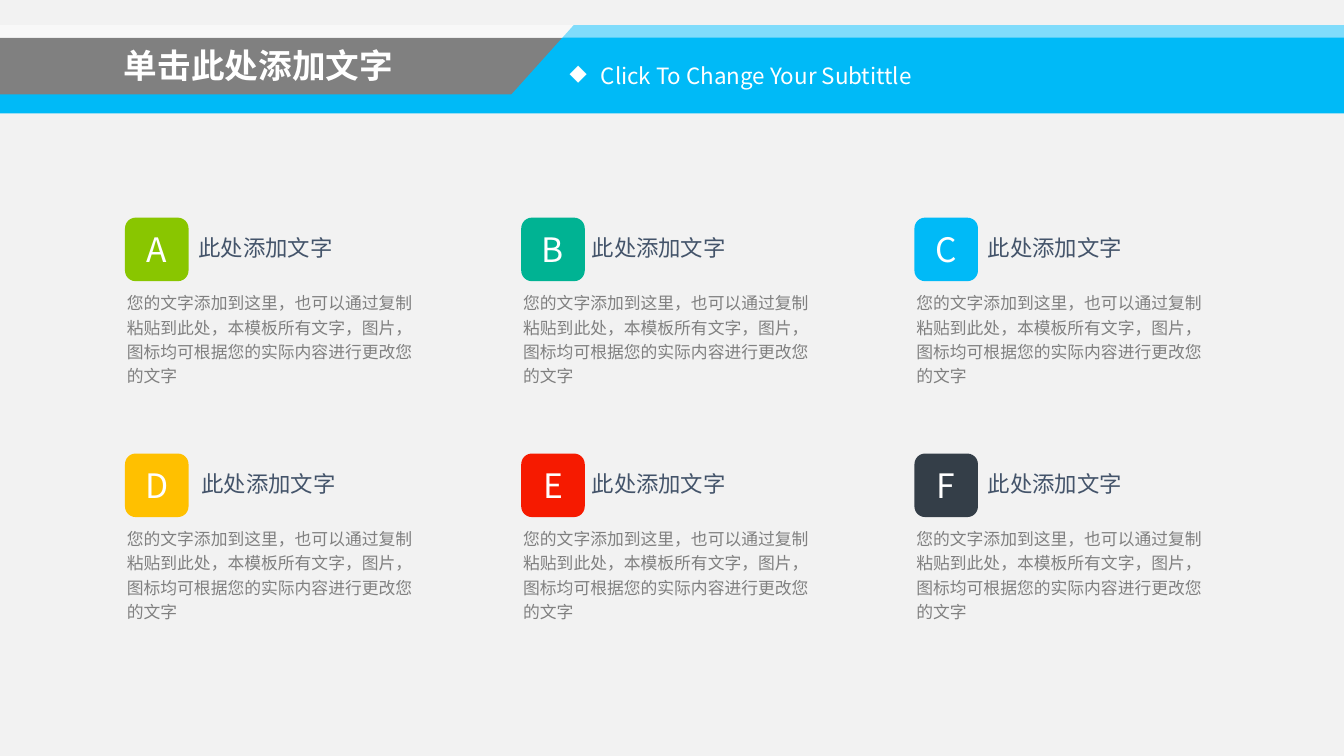
from lxml import etree
from pptx import Presentation
from pptx.dml.color import RGBColor
from pptx.enum.shapes import MSO_SHAPE
from pptx.enum.text import MSO_ANCHOR, MSO_AUTO_SIZE, PP_ALIGN
from pptx.oxml.ns import qn
from pptx.util import Inches, Pt

RECT, ROUND = MSO_SHAPE.RECTANGLE, MSO_SHAPE.ROUNDED_RECTANGLE
MIDDLE, CENTER = MSO_ANCHOR.MIDDLE, PP_ALIGN.CENTER
GROW, FIXED = MSO_AUTO_SIZE.SHAPE_TO_FIT_TEXT, MSO_AUTO_SIZE.NONE

BACK = RGBColor(0xF2, 0xF2, 0xF2)
WHITE = RGBColor(0xFF, 0xFF, 0xFF)
GREY = RGBColor(0x80, 0x80, 0x80)
SLATE = RGBColor(0x44, 0x54, 0x6A)
BLUE = RGBColor(0x00, 0xBA, 0xF7)
GREEN = RGBColor(0x89, 0xC6, 0x00)
TEAL = RGBColor(0x00, 0xB3, 0x93)
AMBER = RGBColor(0xFF, 0xC0, 0x00)
RED = RGBColor(0xF6, 0x1A, 0x00)
DARK = RGBColor(0x34, 0x3E, 0x48)

SANS, LATO = "Noto Sans CJK SC", "Lato"
HEAD = "此处添加文字"
BODY = "您的文字添加到这里，也可以通过复制粘贴到此处，本模板所有文字，图片，图标均可根据您的实际内容进行更改您的文字"

WIDE, HIGH = 106.64, 60
COLS = 9.28, 40.72, 71.92
TOP, STEP = 17.28, 18.72
CARDS = [
    ("A", GREEN, 5.68), ("B", TEAL, 5.44), ("C", BLUE, 5.68),
    ("D", AMBER, 5.92), ("E", RED, 5.44), ("F", DARK, 5.68),
]


def cell(count):
    return Inches(count / 8)


def paint(shape, color):
    shape.shadow.inherit = False
    shape.fill.solid()
    shape.fill.fore_color.rgb = color
    shape.line.fill.background()
    return shape


def block(slide, kind, box, color):
    return paint(slide.shapes.add_shape(kind, *map(cell, box)), color)


def write(frame, text, size, color, font=SANS):
    frame.text = text
    para = frame.paragraphs[0]
    run = para.runs[0]
    run.font.size = Pt(size)
    run.font.name = font
    run.font.color.rgb = color
    east = etree.SubElement(run.font._element, qn("a:ea"))
    east.set("typeface", SANS)
    return para


def label(slide, box, text, size, color, font=SANS, wrap=True, fit=GROW):
    frame = slide.shapes.add_textbox(*map(cell, box)).text_frame
    frame.word_wrap = wrap
    frame.auto_size = fit
    return frame, write(frame, text, size, color, font)


def inset(frame, side, edge):
    frame.margin_left = frame.margin_right = Inches(side)
    frame.margin_top = frame.margin_bottom = Inches(edge)


def bullet(para, mark, indent):
    props = para._p.get_or_add_pPr()
    props.set("marL", str(Inches(indent)))
    props.set("indent", str(-Inches(indent)))
    gap = etree.SubElement(props, qn("a:spcBef"))
    etree.SubElement(gap, qn("a:spcPct")).set("val", "20000")
    etree.SubElement(props, qn("a:buChar")).set("char", mark)


def banner(slide, left, top, width):
    block(slide, RECT, (left, top + 2.5, width, 4.5), BLUE)
    block(slide, RECT, (left, top + 1, width, 4.5), GREY)
    right, base = left + width, top + 6.9
    pen = slide.shapes.build_freeform(cell(left + 45.52), cell(top))
    pen.add_line_segments(
        [(cell(x), cell(y)) for x, y in
         [(right, top), (right, base), (left + 39.32, base)]])
    paint(pen.convert_to_shape(), BLUE)
    strip = block(slide, RECT, (left, top, width, 1), WHITE)
    tint = strip.fill._xPr.find(qn("a:solidFill"))[0]
    etree.SubElement(tint, qn("a:alpha")).set("val", "50000")

    frame, para = label(slide, (left + 9.28, top + 1.36, 30.16, 3.76),
                        "单击此处添加文字", 24, WHITE, LATO)
    inset(frame, 0.07, 0.03)
    para.runs[0].font.bold = True
    frame, para = label(slide, (left + 43.92, top + 2.08, 50.96, 3.68),
                        "Click To Change Your Subtittle", 16, WHITE, fit=FIXED)
    inset(frame, 0.16, 0.08)
    para.line_spacing = 1.1
    bullet(para, "◆", 0.31)


def card(slide, left, top, letter, color, shift):
    para = label(slide, (left, top + 5.28, 24.72, 8.56), BODY, 12, GREY)[1]
    para.line_spacing = 1.2
    badge = block(slide, ROUND, (left + 0.64, top, 5.04, 5.04), color)
    badge.text_frame.vertical_anchor = MIDDLE
    write(badge.text_frame, letter, 24, WHITE).alignment = CENTER
    label(slide, (left + shift, top + 0.92, 12.4, 2.96),
          HEAD, 16, SLATE, wrap=False)


def main():
    deck = Presentation()
    deck.slide_width, deck.slide_height = cell(WIDE), cell(HIGH)
    slide = deck.slides.add_slide(deck.slide_layouts[6])
    slide.background.fill.solid()
    slide.background.fill.fore_color.rgb = BACK
    banner(slide, 0, 2, WIDE)
    for index, item in enumerate(CARDS):
        row, col = divmod(index, len(COLS))
        card(slide, COLS[col], TOP + row * STEP, *item)
    deck.save("out.pptx")


if __name__ == "__main__":
    main()
